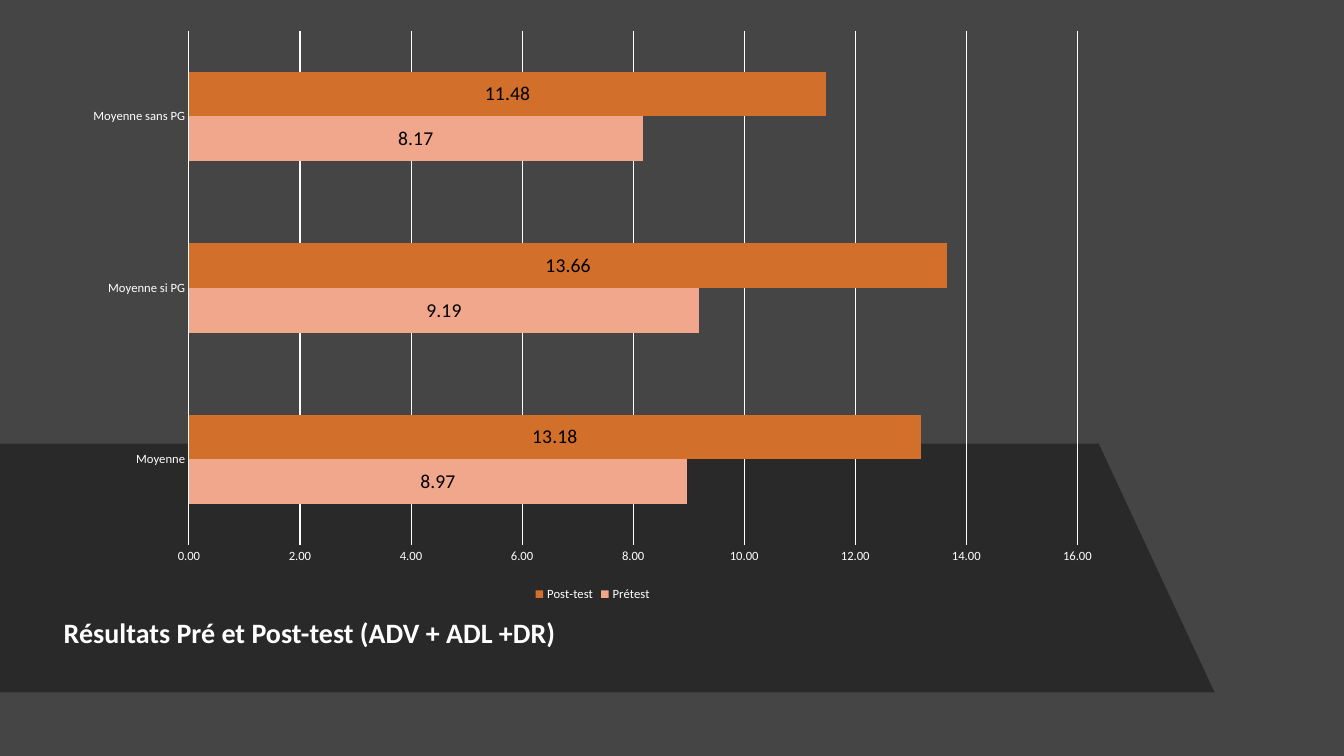
import pptx
import pptx.chart.data
import pptx.dml.color
import pptx.enum.chart
import pptx.enum.text
import pptx.oxml
import pptx.oxml.ns
import pptx.util

Cm, Pt = pptx.util.Cm, pptx.util.Pt
chart_enum = pptx.enum.chart

HEADING = [(" ", 36), ("Résultats Pré et Post-test (ADV + ADL +DR)", 20)]
AVERAGES = ["Moyenne", "Moyenne si PG", "Moyenne sans PG"]
TESTS = [
    ("Prétest", (8.97, 9.19, 8.17), "F1A78B"),
    ("Post-test", (13.18, 13.66, 11.48), "D26F2B"),
]
BAND_OUTLINE = [(0, 11.18), (27.69, 11.18), (30.61, 17.45), (0, 17.45)]
BAND_OPACITY = 88
HEADING_BOX = (1.07, 14.94, 25.73, 1.73)
CHART_BOX = (1.83, 0.48, 26.21, 14.78)
WHITE, BLACK, BACKDROP, BAND = "FFFFFF", "000000", "454545", "262626"

HEADING_FRAME = {
    "word_wrap": True,
    "vertical_anchor": pptx.enum.text.MSO_ANCHOR.MIDDLE,
}
SCORE_SCALE = {
    "minimum_scale": 0,
    "maximum_scale": 16,
    "major_unit": 2,
    "has_major_gridlines": True,
}
SCORE_LABELS = {
    "show_value": True,
    "position": chart_enum.XL_LABEL_POSITION.CENTER,
    "number_format": "0.00",
    "number_format_is_linked": False,
}
LEGEND = {
    "position": chart_enum.XL_LEGEND_POSITION.BOTTOM,
    "include_in_layout": False,
}
BARS = {"gap_width": 182, "overlap": 0, "vary_by_categories": False}


def assign(target, values):
    for key, value in values.items():
        setattr(target, key, value)


def paint(color_format, hex_color):
    color_format.rgb = pptx.dml.color.RGBColor.from_string(hex_color)


def fill(fill_format, hex_color):
    fill_format.solid()
    paint(fill_format.fore_color, hex_color)


def style_font(font, size, hex_color=WHITE, bold=False):
    assign(font, {"name": "Calibri", "size": Pt(size), "bold": bold})
    paint(font.color, hex_color)


def style_line(line, hex_color):
    line.width = Pt(0.75)
    fill(line.fill, hex_color)


def add_band(slide):
    corners = [(Cm(x), Cm(y)) for x, y in BAND_OUTLINE]
    builder = slide.shapes.build_freeform(*corners[0])
    builder.add_line_segments(corners[1:], close=True)
    band = builder.convert_to_shape()
    band.shadow.inherit = False
    band.line.fill.background()
    fill(band.fill, BAND)
    tint = band.fill._xPr.find(".//" + pptx.oxml.ns.qn("a:srgbClr"))
    alpha = pptx.oxml.parse_xml(
        f'<a:alpha {pptx.oxml.ns.nsdecls("a")} val="{BAND_OPACITY * 1000}"/>'
    )
    tint.append(alpha)


def add_heading(slide):
    frame = slide.shapes.add_textbox(*map(Cm, HEADING_BOX)).text_frame
    assign(frame, HEADING_FRAME)
    paragraph = frame.paragraphs[0]
    paragraph.line_spacing = 0.9
    for words, size in HEADING:
        run = paragraph.add_run()
        run.text = words
        style_font(run.font, size, bold=True)


def add_results(slide):
    scores = pptx.chart.data.CategoryChartData(number_format="0.00")
    scores.categories = AVERAGES
    for test, values, _ in TESTS:
        scores.add_series(test, values)
    results = slide.shapes.add_chart(
        chart_enum.XL_CHART_TYPE.BAR_CLUSTERED, *map(Cm, CHART_BOX), scores
    ).chart
    assign(results, {"has_title": False, "has_legend": True})
    style_font(results.font, 10)
    assign(results.legend, LEGEND)
    style_font(results.legend.font, 9)

    average_axis, score_axis = results.category_axis, results.value_axis
    for axis in (average_axis, score_axis):
        axis.major_tick_mark = chart_enum.XL_TICK_MARK.NONE
        axis.minor_tick_mark = chart_enum.XL_TICK_MARK.NONE
        style_font(axis.tick_labels.font, 9)
    average_axis.has_major_gridlines = False
    style_line(average_axis.format.line, WHITE)
    assign(score_axis, SCORE_SCALE)
    assign(score_axis.tick_labels,
           {"number_format": "0.00", "number_format_is_linked": False})
    score_axis.format.line.fill.background()
    style_line(score_axis.major_gridlines.format.line, WHITE)

    bars = results.plots[0]
    assign(bars, BARS)
    for series, (_, _, hex_color) in zip(bars.series, TESTS):
        series.invert_if_negative = False
        fill(series.format.fill, hex_color)
        assign(series.data_labels, SCORE_LABELS)
        style_font(series.data_labels.font, 14, BLACK)


def main():
    deck = pptx.Presentation()
    assign(deck, {"slide_width": Cm(33.87), "slide_height": Cm(19.05)})
    slide = deck.slides.add_slide(deck.slide_layouts[6])
    fill(slide.background.fill, BACKDROP)
    add_band(slide)
    add_heading(slide)
    add_results(slide)
    deck.save("out.pptx")


if __name__ == "__main__":
    main()
